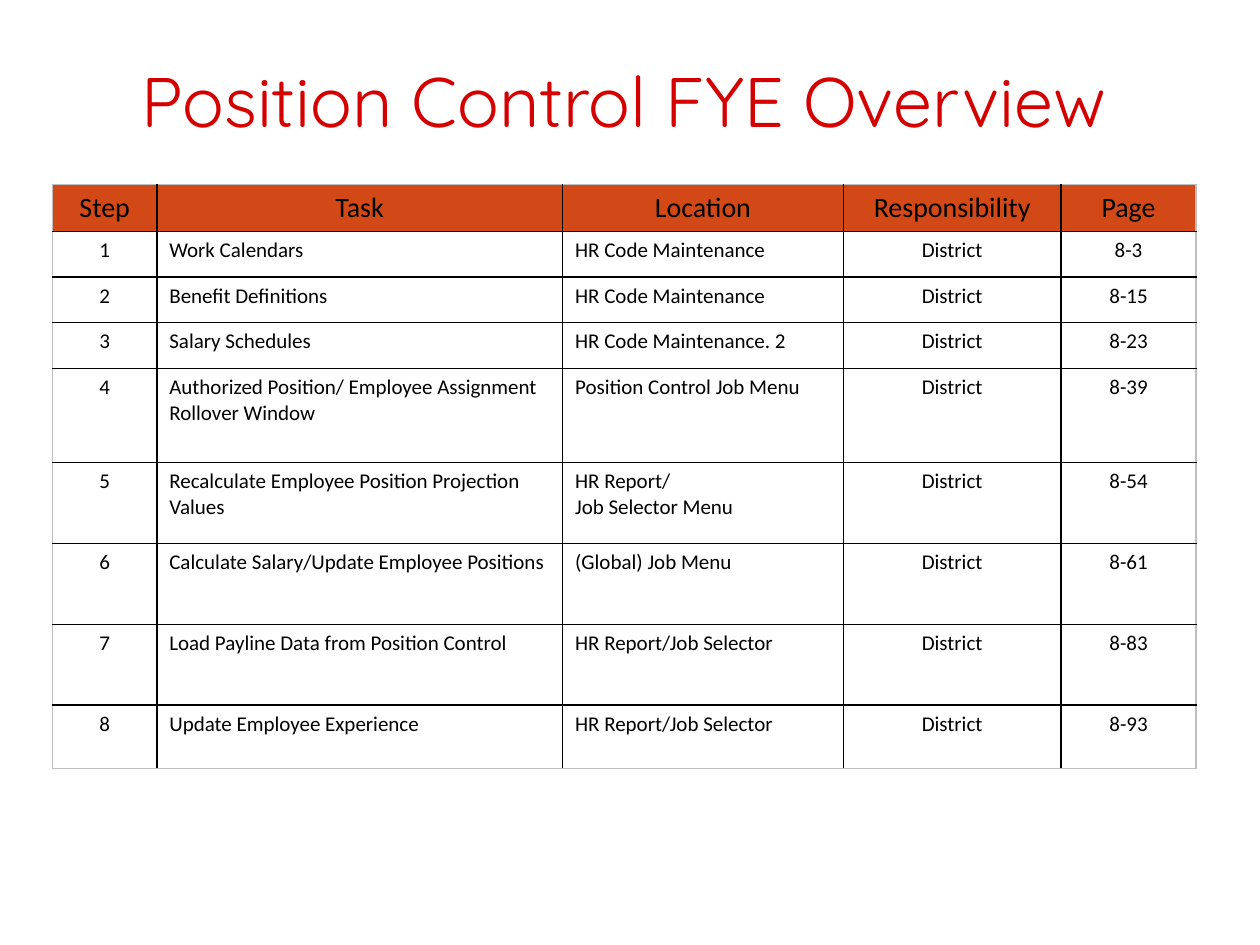
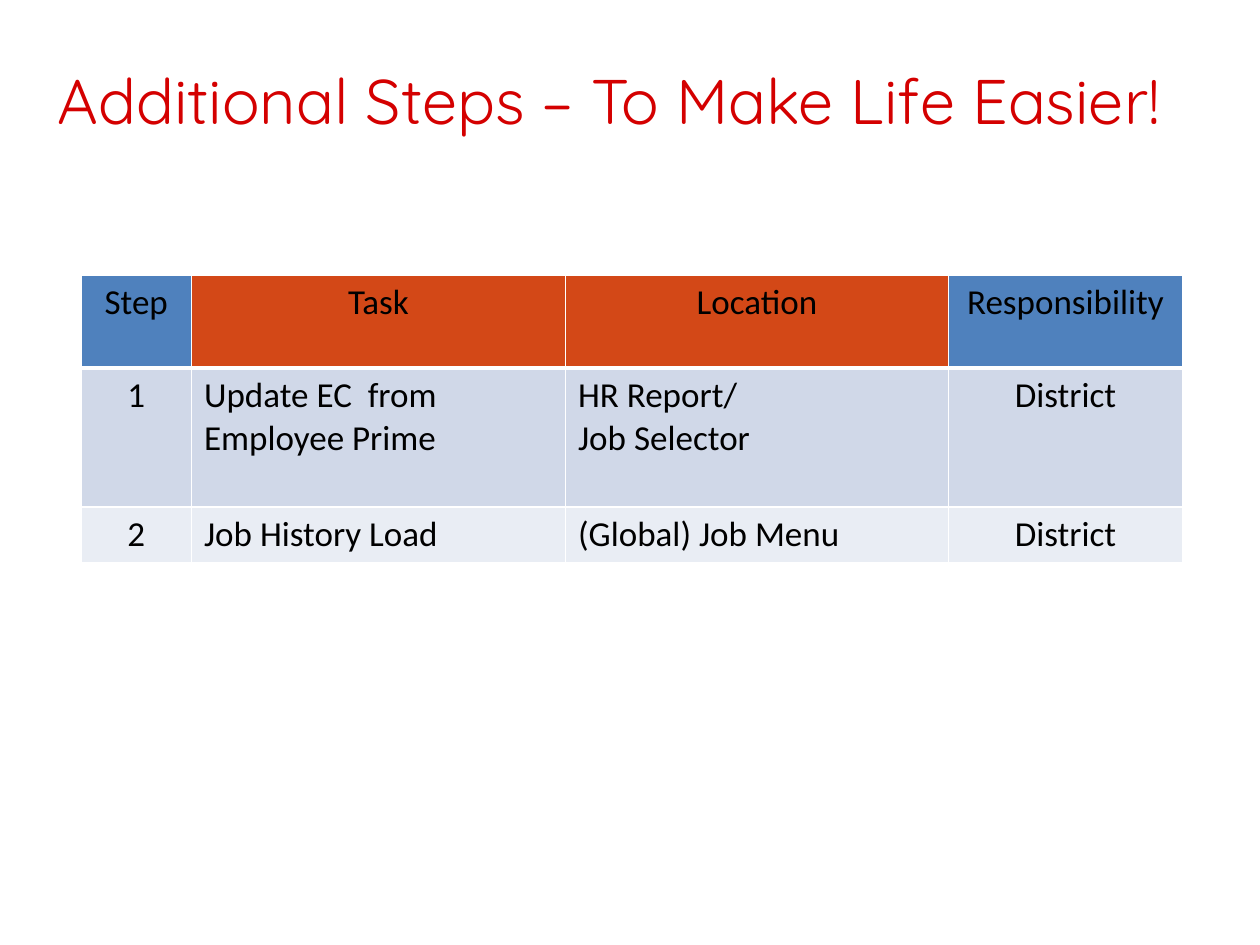
from dataclasses import dataclass

from lxml import etree
from pptx import Presentation
from pptx import util as u
from pptx.dml.color import RGBColor
from pptx.enum import text
from pptx.oxml import ns

RED = RGBColor(0xD4, 0x00, 0x00)
ORANGE = RGBColor(0xD3, 0x48, 0x17)
BLUE = RGBColor(0x4F, 0x81, 0xBD)
PALE_BLUE = RGBColor(0xD0, 0xD8, 0xE8)
PALER_BLUE = RGBColor(0xE9, 0xED, 0xF4)
GREY = RGBColor(0xBF, 0xBF, 0xBF)
BLACK = RGBColor(0x00, 0x00, 0x00)
WHITE = RGBColor(0xFF, 0xFF, 0xFF)

TITLE_FONT = "Quicksand"
TABLE_FONT = "Calibri"
TITLE_TOP, TITLE_HEIGHT = 0.42, 3.18
LEFT_COLUMNS = ("Task", "Location")


@dataclass(frozen=True)
class Title:
    wording: str
    left: float
    width: float
    size: int


@dataclass(frozen=True)
class StepTable:
    left: float
    top: float
    widths: list[float]
    heights: list[float]
    rows: list[tuple[str, ...]]
    header_fills: list[RGBColor]
    band_fills: list[RGBColor]
    header_size: int
    body_size: int
    inner: RGBColor
    outer: RGBColor
    header_rule: float = 1


OVERVIEW = StepTable(
    left=1.06, top=3.72,
    widths=[2.1, 8.18, 5.66, 4.39, 2.72],
    heights=[0.94] + [0.92] * 3 + [1.9] + [1.63] * 3 + [1.28],
    rows=[
        ("Step", "Task", "Location", "Responsibility", "Page"),
        ("1", "Work Calendars", "HR Code Maintenance", "District", "8-3"),
        ("2", "Benefit Definitions", "HR Code Maintenance", "District", "8-15"),
        ("3", "Salary Schedules", "HR Code Maintenance. 2", "District", "8-23"),
        ("4", "Authorized Position/ Employee Assignment Rollover Window",
         "Position Control Job Menu", "District", "8-39"),
        ("5", "Recalculate Employee Position Projection Values",
         "HR Report/\nJob Selector Menu", "District", "8-54"),
        ("6", "Calculate Salary/Update Employee Positions",
         "(Global) Job Menu", "District", "8-61"),
        ("7", "Load Payline Data from Position Control",
         "HR Report/Job Selector", "District", "8-83"),
        ("8", "Update Employee Experience",
         "HR Report/Job Selector", "District", "8-93"),
    ],
    header_fills=[ORANGE] * 5, band_fills=[],
    header_size=16, body_size=12, inner=BLACK, outer=GREY,
)

ADDITIONAL = StepTable(
    left=1.63, top=5.54,
    widths=[2.23, 7.54, 7.72, 4.72],
    heights=[1.88, 2.8, 1.12],
    rows=[
        ("Step", "Task", "Location", "Responsibility"),
        ("1", "Update EC  from Employee Prime",
         "HR Report/\nJob Selector", "District"),
        ("2", "Job History Load", "(Global) Job Menu", "District"),
    ],
    header_fills=[BLUE, ORANGE, ORANGE, BLUE],
    band_fills=[PALE_BLUE, PALER_BLUE],
    header_size=20, body_size=20, inner=WHITE, outer=WHITE, header_rule=3,
)

SLIDES = [
    (Title("Position Control FYE Overview", 1.78, 21.59, 40), OVERVIEW),
    (Title("Additional Steps – To Make Life Easier!", 0.42, 23.71, 36), ADDITIONAL),
]


def add_title(s, title: Title) -> None:
    sp = s.shapes.title
    sp.left, sp.top = u.Cm(title.left), u.Cm(TITLE_TOP)
    sp.width, sp.height = u.Cm(title.width), u.Cm(TITLE_HEIGHT)
    tf = sp.text_frame
    tf.text = title.wording
    tf.auto_size = text.MSO_AUTO_SIZE.NONE
    tf.vertical_anchor = text.MSO_ANCHOR.MIDDLE
    p = tf.paragraphs[0]
    p.alignment = text.PP_ALIGN.CENTER
    style_font(p.font, TITLE_FONT, title.size, RED)


def style_font(font, name: str, size: int, color: RGBColor) -> None:
    font.name = name
    font.size = u.Pt(size)
    font.bold = False
    font.color.rgb = color


def add_border(cell, side: str, color: RGBColor, width: float) -> None:
    tc_pr = cell._tc.get_or_add_tcPr()
    ln = etree.SubElement(tc_pr, ns.qn(f"a:ln{side}"), w=str(u.Pt(width)))
    fill = etree.SubElement(ln, ns.qn("a:solidFill"))
    etree.SubElement(fill, ns.qn("a:srgbClr"), val=str(color))


def border_cell(cell, spec_table: StepTable, row: int, col: int) -> None:
    last_row, last_col = len(spec_table.rows) - 1, len(spec_table.widths) - 1
    edges = {"L": col == 0, "R": col == last_col, "T": row == 0, "B": row == last_row}
    for side, is_outer in edges.items():
        under_header = (row, side) in ((0, "B"), (1, "T"))
        add_border(cell, side, spec_table.outer if is_outer else spec_table.inner,
                   spec_table.header_rule if under_header else 1)


def fill_cell(cell, step_table: StepTable, row: int, col: int) -> None:
    bands = step_table.band_fills
    if row and not bands:
        cell.fill.background()
        return
    cell.fill.solid()
    cell.fill.fore_color.rgb = (
        bands[(row - 1) % len(bands)] if row else step_table.header_fills[col])


def add_step_table(s, step_table: StepTable) -> None:
    rows, widths, heights = step_table.rows, step_table.widths, step_table.heights
    table = s.shapes.add_table(
        len(rows), len(widths), u.Cm(step_table.left), u.Cm(step_table.top),
        u.Cm(sum(widths)), u.Cm(sum(heights))).table
    table.first_row = table.horz_banding = False
    for column, width in zip(table.columns, widths):
        column.width = u.Cm(width)
    for table_row, height in zip(table.rows, heights):
        table_row.height = u.Cm(height)
    for row, wordings in enumerate(rows):
        for col, wording in enumerate(wordings):
            cell = table.cell(row, col)
            cell.text = wording
            border_cell(cell, step_table, row, col)
            fill_cell(cell, step_table, row, col)
            is_left = row > 0 and rows[0][col] in LEFT_COLUMNS
            size = step_table.body_size if row else step_table.header_size
            for p in cell.text_frame.paragraphs:
                p.alignment = text.PP_ALIGN.LEFT if is_left else text.PP_ALIGN.CENTER
                style_font(p.font, TABLE_FONT, size, BLACK)


def main() -> None:
    prs = Presentation()
    prs.slide_width, prs.slide_height = u.Cm(25.4), u.Cm(19.05)
    for title, step_table in SLIDES:
        s = prs.slides.add_slide(prs.slide_layouts[5])
        add_title(s, title)
        add_step_table(s, step_table)
    prs.save("out.pptx")


if __name__ == "__main__":
    main()
